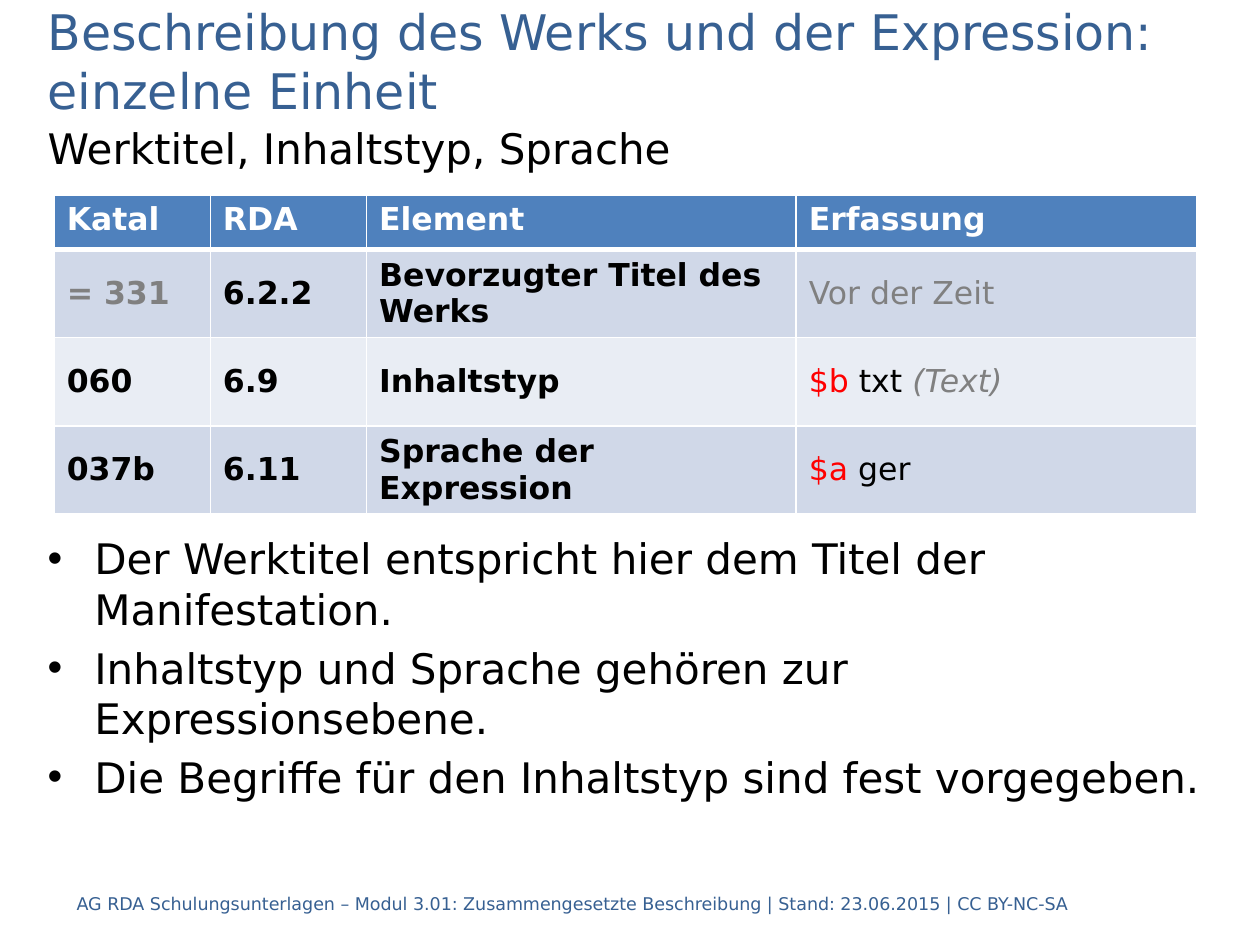
from dataclasses import dataclass

from lxml.etree import SubElement
from pptx import Presentation
from pptx.dml.color import RGBColor
from pptx.enum.text import MSO_ANCHOR
from pptx.oxml.ns import qn
from pptx.util import Inches, Pt

FONT = "DejaVu Sans"
BLUE, BLACK, WHITE, GRAY, RED = "376092", "000000", "FFFFFF", "808080", "FF0000"
HEADER_FILL, BAND_FILLS = "4F81BD", ("D0D8E8", "E9EDF4")


@dataclass(frozen=True)
class Block:
    lines: tuple[str, ...]
    left: float
    top: float
    width: float
    height: float
    size: float
    color: str = BLACK
    anchor: MSO_ANCHOR = MSO_ANCHOR.TOP
    bulleted: bool = False


@dataclass(frozen=True)
class Span:
    text: str
    color: str = BLACK
    bold: bool = False
    italic: bool = False


def rgb(color: str) -> RGBColor:
    """Turn a hex string into a colour."""
    return RGBColor.from_string(color)


def style_font(font, size: float, color: str) -> None:
    """Set typeface, size and colour."""
    font.name, font.size = FONT, Pt(size)
    font.color.rgb = rgb(color)


def add_bullet(paragraph, indent: float) -> None:
    """Give a paragraph a hanging bullet."""
    properties = paragraph._p.get_or_add_pPr()
    properties.set("marL", str(Inches(indent)))
    properties.set("indent", str(-Inches(indent)))
    SubElement(properties, qn("a:buFont"), typeface="Arial")
    SubElement(properties, qn("a:buChar"), char="•")


def add_block(slide, block: Block) -> None:
    """Draw a text box with one paragraph per line."""
    frame = slide.shapes.add_textbox(
        Inches(block.left), Inches(block.top), Inches(block.width), Inches(block.height)
    ).text_frame
    frame.word_wrap = True
    frame.vertical_anchor = block.anchor
    for index, line in enumerate(block.lines):
        paragraph = frame.paragraphs[0] if index == 0 else frame.add_paragraph()
        paragraph.text = line
        style_font(paragraph.font, block.size, block.color)
        if block.bulleted:
            paragraph.space_after = Pt(4.8)
            add_bullet(paragraph, 0.37)


def add_borders(cell, top: float, bottom: float) -> None:
    """Put white lines around a cell, before its fill is set."""
    properties = cell._tc.get_or_add_tcPr()
    for side, width in {"lnL": 1, "lnR": 1, "lnT": top, "lnB": bottom}.items():
        line = SubElement(properties, qn(f"a:{side}"), w=str(Pt(width)))
        SubElement(SubElement(line, qn("a:solidFill")), qn("a:srgbClr"), val=WHITE)


def fill_cell(cell, spans: tuple[Span, ...], fill: str) -> None:
    """Fill a cell and write its spans."""
    cell.fill.solid()
    cell.fill.fore_color.rgb = rgb(fill)
    paragraph = cell.text_frame.paragraphs[0]
    paragraph.font.name, paragraph.font.size = FONT, Pt(18)
    for span in spans:
        run = paragraph.add_run()
        run.text = span.text
        style_font(run.font, 18, span.color)
        run.font.bold, run.font.italic = span.bold, span.italic


def add_elements_table(slide, rows: list[tuple[tuple[Span, ...], ...]]) -> None:
    """Draw the table of elements with a header and banded rows."""
    widths, heights = (1.24, 1.24, 3.41, 3.18), (0.43, 0.7, 0.7, 0.7)
    table = slide.shapes.add_table(
        len(heights), len(widths), Inches(0.43), Inches(1.55),
        Inches(sum(widths)), Inches(sum(heights)),
    ).table
    for column, width in zip(table.columns, widths):
        column.width = Inches(width)
    for index, (row, height, entries) in enumerate(zip(table.rows, heights, rows)):
        row.height = Inches(height)
        is_header = index == 0
        fill = HEADER_FILL if is_header else BAND_FILLS[(index - 1) % 2]
        for cell, spans in zip(row.cells, entries):
            add_borders(cell, 3 if index == 1 else 1, 3 if is_header else 1)
            fill_cell(cell, spans, fill)
            cell.vertical_anchor = MSO_ANCHOR.TOP if is_header else MSO_ANCHOR.MIDDLE


def element_row(field: str, rda: str, element: str, *entry: Span,
                field_color: str = BLACK) -> tuple[tuple[Span, ...], ...]:
    """Make a table row with three bold labels and an entry."""
    return (
        (Span(field, field_color, True),),
        (Span(rda, bold=True),),
        (Span(element, bold=True),),
        entry,
    )


HEADER = tuple((Span(label, WHITE, True),) for label in ("Katal", "RDA", "Element", "Erfassung"))
ROWS = [
    HEADER,
    element_row("= 331", "6.2.2", "Bevorzugter Titel des Werks",
                Span("Vor der Zeit", GRAY), field_color=GRAY),
    element_row("060", "6.9", "Inhaltstyp",
                Span("$b ", RED), Span("txt "), Span("(Text)", GRAY, italic=True)),
    element_row("037b", "6.11", "Sprache der Expression", Span("$a ", RED), Span("ger")),
]
BLOCKS = [
    Block(("Beschreibung des Werks und der Expression: einzelne Einheit",),
          0.28, 0.2, 9.45, 0.56, 28, BLUE, MSO_ANCHOR.MIDDLE),
    Block(("Werktitel, Inhaltstyp, Sprache",), 0.28, 0.92, 9.45, 0.5, 24),
    Block(("Der Werktitel entspricht hier dem Titel der Manifestation.",
           "Inhaltstyp und Sprache gehören zur Expressionsebene.",
           "Die Begriffe für den Inhaltstyp sind fest vorgegeben."),
          0.28, 4.18, 9.45, 2.72, 24, bulleted=True),
    Block(("AG RDA Schulungsunterlagen – Modul 3.01: Zusammengesetzte Beschreibung"
           " | Stand: 23.06.2015 | CC BY-NC-SA",),
          0.51, 6.97, 8.74, 0.4, 10, BLUE, MSO_ANCHOR.MIDDLE),
]


def main() -> None:
    """Build and save the slide."""
    presentation = Presentation()
    presentation.slide_width, presentation.slide_height = Inches(10), Inches(7.5)
    slide = presentation.slides.add_slide(presentation.slide_layouts[6])
    for block in BLOCKS:
        add_block(slide, block)
    add_elements_table(slide, ROWS)
    presentation.save("out.pptx")


if __name__ == "__main__":
    main()
